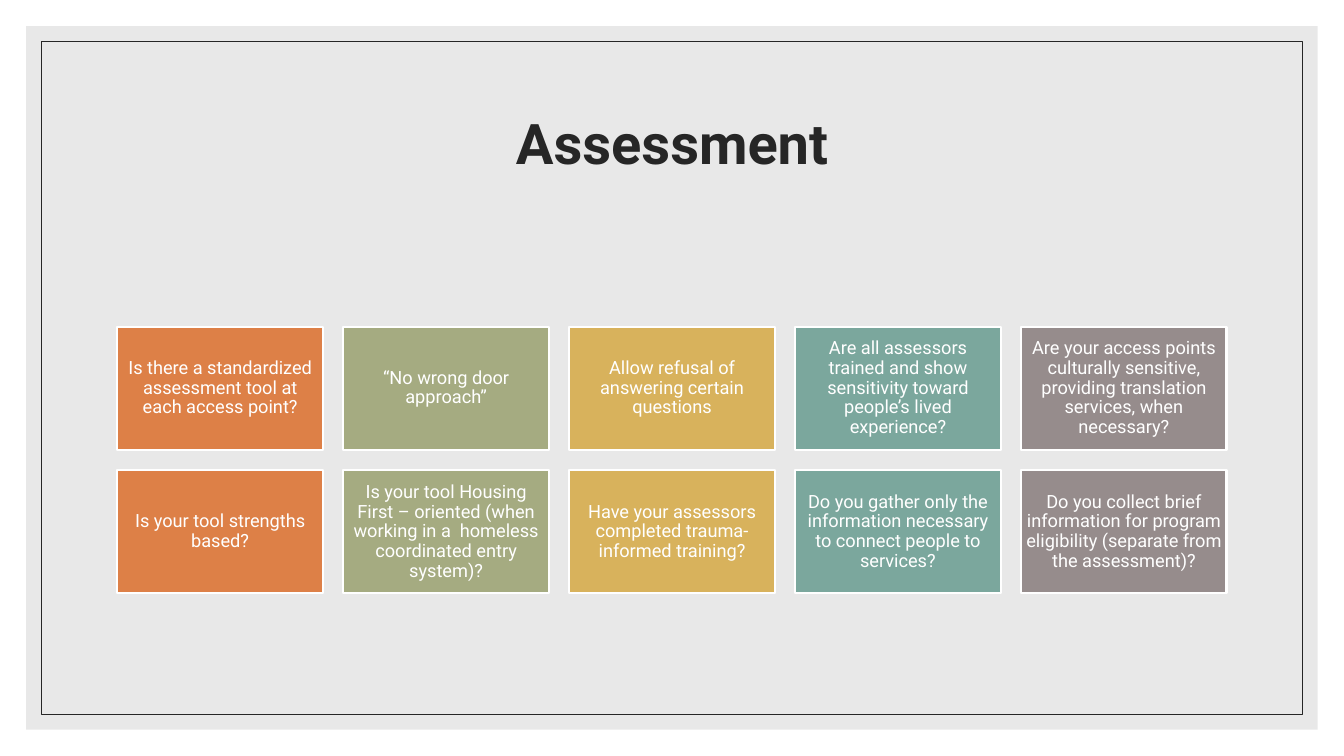
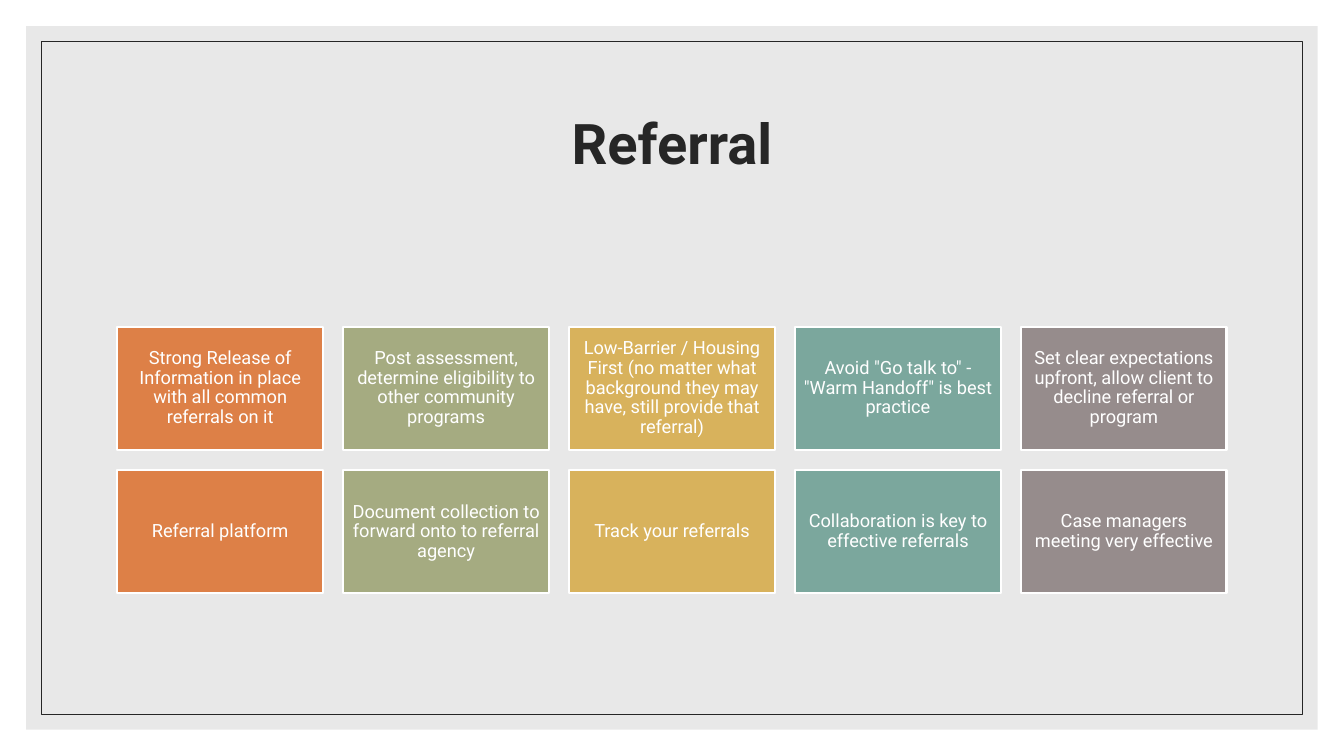
from pptx import Presentation
from pptx.dml.color import RGBColor
from pptx.enum.shapes import MSO_SHAPE
from pptx.enum.text import MSO_ANCHOR, PP_ALIGN
from pptx.util import Inches, Pt

RECTANGLE = MSO_SHAPE.RECTANGLE
MIDDLE = MSO_ANCHOR.MIDDLE
CENTER = PP_ALIGN.CENTER

SLIDE_WIDTH, SLIDE_HEIGHT = 13.33, 7.5
FONT = "Roboto"
WHITE, INK, PANEL = "FFFFFF", "262626", "E8E8E8"
COLUMN_COLORS = ["DD8047", "A5AB81", "D8B25C", "7BA79D", "968C8C"]

# Five columns and four gaps fill the content width; a gap is a tenth of a box.
CONTENT_WIDTH = 11
CONTENT_LEFT = (SLIDE_WIDTH - CONTENT_WIDTH) / 2
GRID_TOP = 3.24
COLUMNS = len(COLUMN_COLORS)
BOX_WIDTH = CONTENT_WIDTH / (COLUMNS + 0.1 * (COLUMNS - 1))
BOX_HEIGHT = 0.6 * BOX_WIDTH
GAP = 0.1 * BOX_WIDTH

PAGES = [
    ("Assessment", [
        "Is there a standardized assessment tool at each access point?",
        "“No wrong door approach”",
        "Allow refusal of answering certain questions",
        "Are all assessors trained and show sensitivity toward people’s lived experience?",
        "Are your access points culturally sensitive, providing translation services, when necessary?",
        "Is your tool strengths based?",
        "Is your tool Housing First – oriented (when working in a  homeless coordinated entry system)?",
        "Have your assessors completed trauma-informed training?",
        "Do you gather only the information necessary to connect people to services?",
        "Do you collect brief information for program eligibility (separate from the assessment)?",
    ]),
    ("Referral", [
        "Strong Release of Information in place with all common referrals on it",
        "Post assessment, determine eligibility to other community programs",
        "Low-Barrier / Housing First (no matter what background they may have, still provide that referral)",
        "Avoid \"Go talk to\" - \"Warm Handoff\" is best practice",
        "Set clear expectations upfront, allow client to decline referral or program",
        "Referral platform",
        "Document collection to forward onto to referral agency",
        "Track your referrals",
        "Collaboration is key to effective referrals",
        "Case managers meeting very effective",
    ]),
]


def add_box(page, left, top, width, height, fill=None, line=None, weight=0):
    box = page.shapes.add_shape(
        RECTANGLE, Inches(left), Inches(top), Inches(width), Inches(height))
    box.shadow.inherit = False
    for part, color in ((box.fill, fill), (box.line.fill, line)):
        if color:
            part.solid()
            part.fore_color.rgb = RGBColor.from_string(color)
        else:
            part.background()
    if line:
        box.line.width = Pt(weight)
    return box


def write_centered(shape, text, size, color, bold=False):
    frame = shape.text_frame
    frame.word_wrap = True
    frame.vertical_anchor = MIDDLE
    para = frame.paragraphs[0]
    para.alignment = CENTER
    para.line_spacing = 0.9
    span = para.add_run()
    span.text = text
    span.font.name = FONT
    span.font.size = Pt(size)
    span.font.bold = bold
    span.font.color.rgb = RGBColor.from_string(color)


deck = Presentation()
deck.slide_width, deck.slide_height = Inches(SLIDE_WIDTH), Inches(SLIDE_HEIGHT)
title_only = deck.slide_layouts[5]
background = deck.slide_master.background.fill
background.solid()
background.fore_color.rgb = RGBColor.from_string(WHITE)

for heading, questions in PAGES:
    page = deck.slides.add_slide(title_only)

    for margin, style in ((0.26, {"fill": PANEL}), (0.41, {"line": INK, "weight": 0.5})):
        add_box(page, margin, margin,
                SLIDE_WIDTH - 2 * margin, SLIDE_HEIGHT - 2 * margin, **style)

    title = page.shapes.title
    title.left, title.top = Inches(CONTENT_LEFT), Inches(0.7)
    title.width, title.height = Inches(CONTENT_WIDTH), Inches(1.5)
    write_centered(title, heading, 40, INK, bold=True)
    # The title placeholder starts at the back; bring it in front of the panel.
    title.element.getparent().append(title.element)

    for index, question in enumerate(questions):
        row, column = divmod(index, COLUMNS)
        box = add_box(page,
                      CONTENT_LEFT + column * (BOX_WIDTH + GAP),
                      GRID_TOP + row * (BOX_HEIGHT + GAP),
                      BOX_WIDTH, BOX_HEIGHT,
                      fill=COLUMN_COLORS[column], line=WHITE, weight=1.5)
        frame = box.text_frame
        frame.margin_left = frame.margin_right = Inches(0.05)
        frame.margin_top = frame.margin_bottom = Inches(0.05)
        write_centered(box, question, 13, WHITE)

deck.save("out.pptx")
